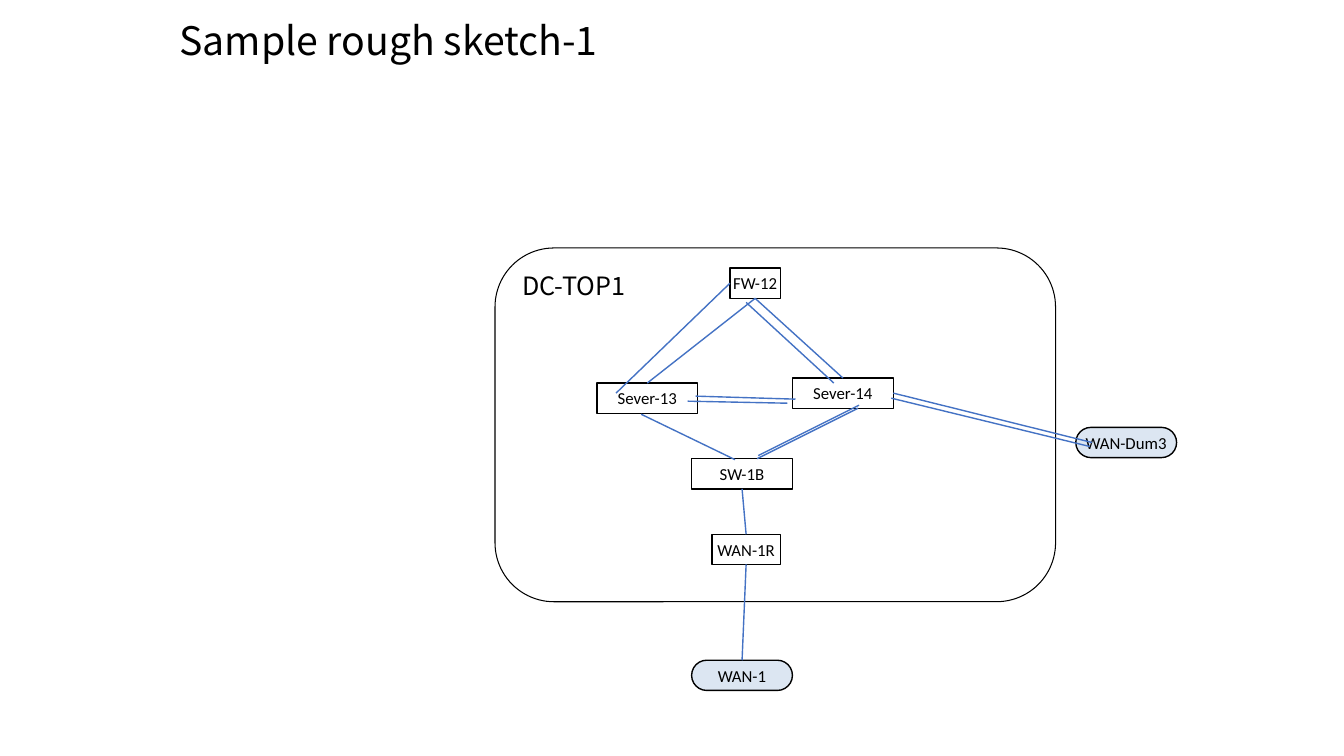
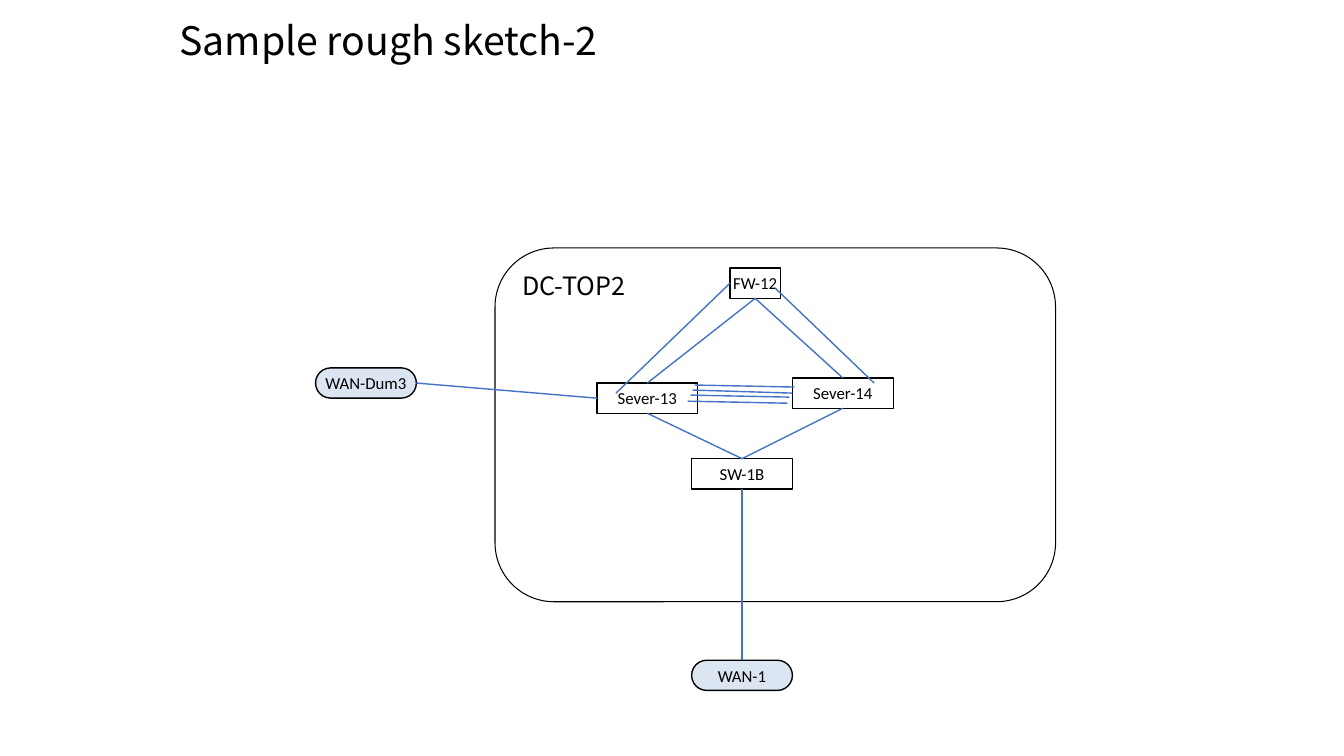
import pptx
import pptx.dml.color
import pptx.enum.shapes
import pptx.enum.text
import pptx.oxml.ns
import pptx.util
from lxml import etree

Inches, Pt = pptx.util.Inches, pptx.util.Pt
SHAPES = pptx.enum.shapes.MSO_SHAPE
ALIGN = pptx.enum.text.PP_ALIGN
ANCHOR = pptx.enum.text.MSO_ANCHOR

BLACK, LINK_BLUE, WAN_FILL = "000000", "4472C4", "DCE6F2"
HEADING_FONT, NODE_FONT = "Noto Sans CJK JP", "Calibri"
TOP, LEFT, BOTTOM, RIGHT = range(4)
TITLE_BOX = (1.68, 0.09, 9, 0.67)
SITE_BOX = (4.91, 2.46, 5.56, 3.51)
NODE_WIDTH, NODE_HEIGHT = 1, 0.3
NARROW_WIDTHS = {"FW-12": 0.5, "WAN-1R": 0.68}

# Left and top of each node
SHARED_NODES = {
    "FW-12": (7.24, 2.66),
    "Sever-13": (5.92, 3.8),
    "Sever-14": (7.86, 3.75),
    "SW-1B": (6.86, 4.55),
    "WAN-1": (6.86, 6.55),
}
# A link end is either (node name, side) or a free point (x, y)
SHARED_LINKS = [
    (("Sever-13", TOP), ("FW-12", BOTTOM)),
    (("Sever-14", TOP), ("FW-12", BOTTOM)),
    ((6.11, 3.9), ("FW-12", LEFT)),
    ((6.82, 3.98), (7.81, 4)),
]
SKETCHES = [
    {
        "title": "Sample rough sketch-1",
        "site": "DC-TOP1",
        "nodes": {"WAN-1R": (7.06, 5.3), "WAN-Dum3": (10.67, 4.24)},
        "links": [
            (("WAN-1R", BOTTOM), ("WAN-1", TOP)),
            (("SW-1B", BOTTOM), ("WAN-1R", TOP)),
            ((6.36, 4.11), (7.29, 4.56)),
            (("Sever-14", RIGHT), (10.83, 4.39)),
            ((8.84, 3.95), (10.81, 4.43)),
            ((6.9, 3.93), (7.89, 3.96)),
            ((8.27, 3.8), (7.4, 3)),
            ((8.52, 4.02), (7.52, 4.52)),
            ((8.51, 4.05), (7.51, 4.55)),
        ],
    },
    {
        "title": "Sample rough sketch-2",
        "site": "DC-TOP2",
        "nodes": {"WAN-Dum3": (3.13, 3.65)},
        "links": [
            (("SW-1B", BOTTOM), ("WAN-1", TOP)),
            (("Sever-13", BOTTOM), ("SW-1B", TOP)),
            (("Sever-14", BOTTOM), ("SW-1B", TOP)),
            ((8.67, 3.8), (7.69, 2.86)),
            (("WAN-Dum3", RIGHT), ("Sever-13", LEFT)),
            ((6.89, 3.82), (7.88, 3.84)),
            ((6.87, 3.87), (7.86, 3.9)),
            ((6.85, 3.92), (7.83, 3.94)),
        ],
    },
]


def color(hex_value):
    return pptx.dml.color.RGBColor.from_string(hex_value)


def write_text(shape, text, font, size, align, anchor):
    frame = shape.text_frame
    frame.text = text
    frame.word_wrap = True
    frame.auto_size = pptx.enum.text.MSO_AUTO_SIZE.NONE
    frame.vertical_anchor = anchor
    paragraph = frame.paragraphs[0]
    paragraph.alignment = align
    run = paragraph.runs[0]
    run.font.name, run.font.size = font, Pt(size)
    run.font.color.rgb = color(BLACK)


def add_title(slide, text):
    title = slide.shapes.title
    title.left, title.top, title.width, title.height = map(Inches, TITLE_BOX)
    write_text(title, text, HEADING_FONT, 28, ALIGN.LEFT, ANCHOR.MIDDLE)
    title.text_frame.paragraphs[0].line_spacing = 0.9


def add_box(slide, box, corner, line_width, fill=None):
    shape = slide.shapes.add_shape(SHAPES.ROUNDED_RECTANGLE, *map(Inches, box))
    shape.adjustments[0] = corner
    shape.shadow.inherit = False
    shape.line.color.rgb = color(BLACK)
    shape.line.width = Pt(line_width)
    if fill:
        shape.fill.solid()
        shape.fill.fore_color.rgb = color(fill)
    else:
        shape.fill.background()
    return shape


def add_node(slide, name, position):
    """Draw a square-cornered device, or a filled pill for an outside WAN."""
    outside = name in ("WAN-1", "WAN-Dum3")
    box = (*position, NARROW_WIDTHS.get(name, NODE_WIDTH), NODE_HEIGHT)
    node = add_box(slide, box, 0.5 if outside else 0, 1, WAN_FILL if outside else None)
    write_text(node, name, NODE_FONT, 12, ALIGN.CENTER, ANCHOR.MIDDLE)
    frame = node.text_frame
    frame.margin_left = frame.margin_top = frame.margin_right = frame.margin_bottom = 0
    return node


def add_link(slide, nodes, start, end):
    # A joined end starts at the origin and is moved by its connect call
    points = [(0, 0) if point[0] in nodes else point for point in (start, end)]
    link = slide.shapes.add_connector(
        pptx.enum.shapes.MSO_CONNECTOR.STRAIGHT,
        *(Inches(value) for point in points for value in point))
    for (target, side), connect in ((start, link.begin_connect), (end, link.end_connect)):
        if target in nodes:
            connect(nodes[target], side)
    link.line.color.rgb = color(LINK_BLUE)
    link.line.width = Pt(1)
    etree.SubElement(link._element.spPr, pptx.oxml.ns.qn("a:effectLst"))


def add_sketch(presentation, sketch):
    slide = presentation.slides.add_slide(presentation.slide_layouts[5])
    add_title(slide, sketch["title"])
    site = add_box(slide, SITE_BOX, 0.1667, 0.75)
    write_text(site, sketch["site"], HEADING_FONT, 18, ALIGN.LEFT, ANCHOR.TOP)
    positions = {**SHARED_NODES, **sketch["nodes"]}
    nodes = {name: add_node(slide, name, position) for name, position in positions.items()}
    for start, end in SHARED_LINKS + sketch["links"]:
        add_link(slide, nodes, start, end)


def main():
    presentation = pptx.Presentation()
    presentation.slide_width, presentation.slide_height = Inches(13.33), Inches(7.5)
    for sketch in SKETCHES:
        add_sketch(presentation, sketch)
    presentation.save("out.pptx")


if __name__ == "__main__":
    main()
